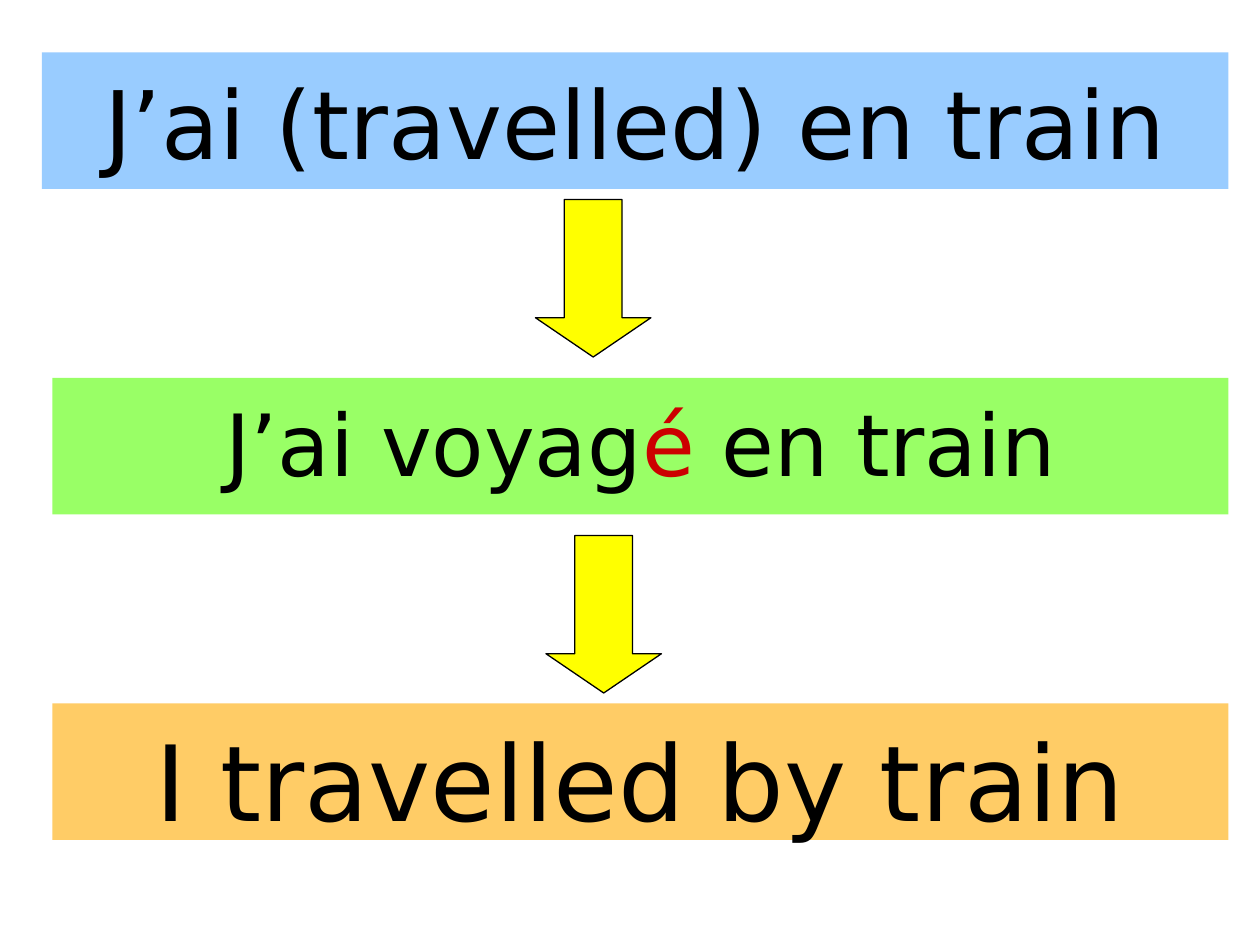
from pptx import Presentation
from pptx.dml.color import RGBColor
from pptx.enum.shapes import MSO_SHAPE as Shape
from pptx.enum.text import MSO_ANCHOR as Anchor, PP_ALIGN as Align
from pptx.util import Pt


def colour(value):
    return RGBColor.from_string(value)


class SlideBuilder:
    """Holds the style and the current slide."""

    font_name = "DejaVu Sans"
    text_colour = "000000"
    arrow_fill = "FFFF00"
    frame_format = {
        "word_wrap": True,
        "vertical_anchor": Anchor.TOP,
        "margin_left": Pt(7.2),
        "margin_right": Pt(7.2),
        "margin_top": Pt(7.2),
        "margin_bottom": Pt(0),
    }

    def __init__(self, page):
        self.page = page

    def shape(self, kind, left, top, width, height, fill):
        box = self.page.shapes.add_shape(
            kind, Pt(left), Pt(top), Pt(width), Pt(height))
        box.shadow.inherit = False
        box.fill.solid()
        box.fill.fore_color.rgb = colour(fill)
        return box

    def banner(self, left, top, width, fill, size, spans):
        box = self.shape(Shape.RECTANGLE, left, top, width, 78, fill)
        box.line.fill.background()
        frame = box.text_frame
        for name, value in self.frame_format.items():
            setattr(frame, name, value)
        para = frame.paragraphs[0]
        para.alignment = Align.CENTER
        for text, shade in spans:
            span = para.add_run()
            span.text = text
            for name, value in {"name": self.font_name, "size": Pt(size)}.items():
                setattr(span.font, name, value)
            span.font.color.rgb = colour(shade or self.text_colour)

    def down_arrow(self, left, top):
        arrow = self.shape(Shape.DOWN_ARROW, left, top, 66, 90, self.arrow_fill)
        arrow.adjustments[0] = 0.5
        arrow.adjustments[1] = 0.34
        arrow.line.color.rgb = colour(self.text_colour)
        arrow.line.width = Pt(0.75)


def main():
    deck = Presentation()
    deck.slide_width, deck.slide_height = Pt(720), Pt(540)
    builder = SlideBuilder(deck.slides.add_slide(deck.slide_layouts[6]))

    # Sentence steps, from the prompt to the translation
    builder.banner(24, 30, 678, "99CCFF", 54,
                   [("J’ai (travelled) en train", None)])
    builder.banner(30, 216, 672, "99FF66", 49,
                   [("J’ai voyag", None), ("é", "CC0000"), (" en train", None)])
    builder.banner(30, 402, 672, "FFCC66", 60,
                   [("I travelled by train", None)])

    # Arrows between the steps
    for left, top in ((306, 114), (312, 306)):
        builder.down_arrow(left, top)

    deck.save("out.pptx")


if __name__ == "__main__":
    main()
